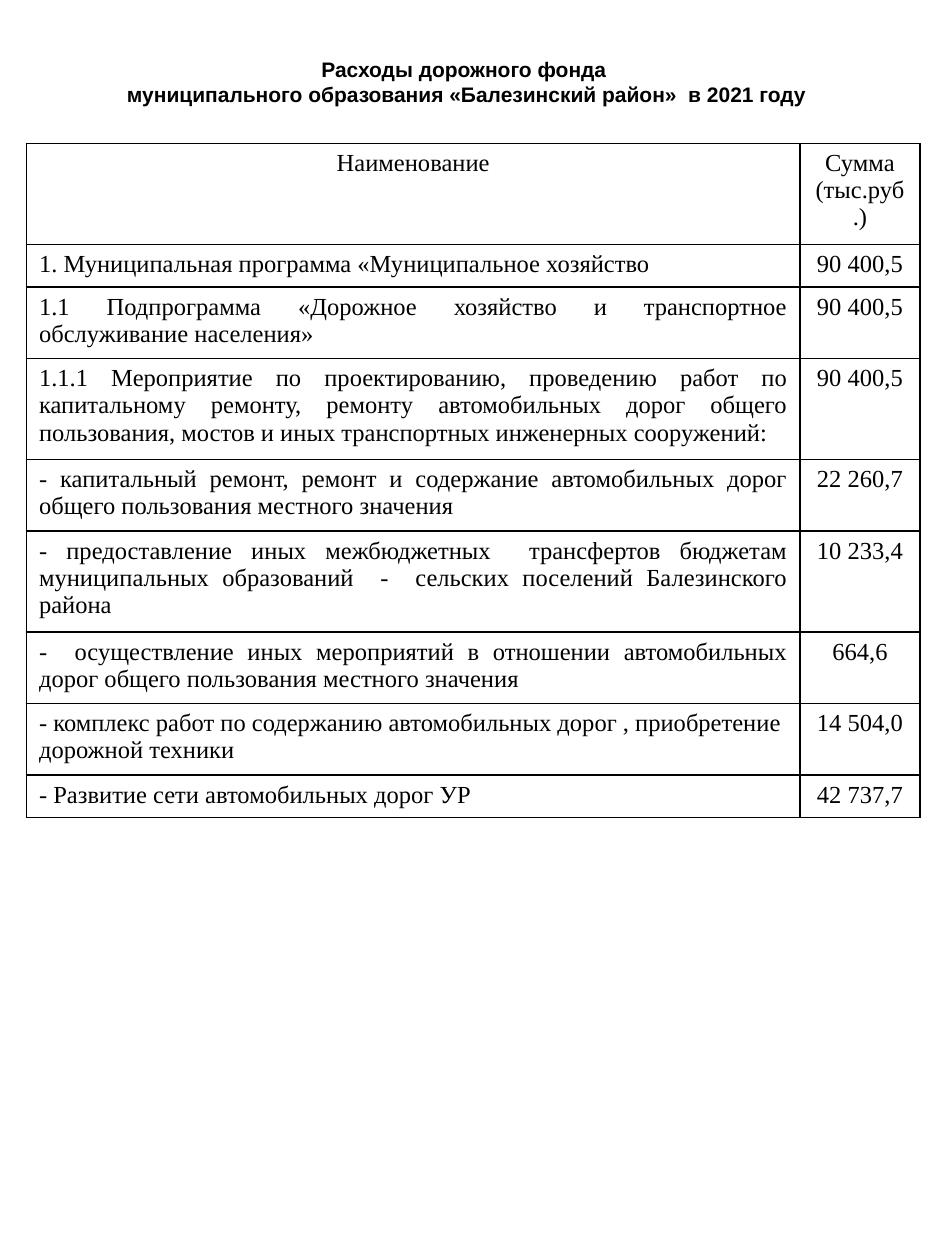
from dataclasses import dataclass

from lxml.etree import SubElement
from pptx import Presentation
from pptx.dml.color import RGBColor as RGB
from pptx.enum.text import MSO_ANCHOR as Anchor, PP_ALIGN as Align
from pptx.oxml.ns import qn
from pptx.util import Pt


@dataclass(frozen=True)
class Theme:
    ink: RGB = RGB(0, 0, 0)
    paper: RGB = RGB(255, 255, 255)
    title_font: str = "Arial"
    title_size: int = 12
    table_font: str = "Times New Roman"
    table_size: int = 14
    border: int = 1


THEME = Theme()

HEADING = [
    "Расходы дорожного фонда ",
    "муниципального образования «Балезинский район»  в 2021 году",
]

# Name, amount, lines of text in the row, alignment of the name
EXPENSES = [
    ("Наименование", "Сумма (тыс.руб.)", 3, Align.CENTER),
    ("1. Муниципальная программа «Муниципальное хозяйство ", "90 400,5", 1, Align.JUSTIFY),
    ("1.1 Подпрограмма «Дорожное хозяйство и транспортное обслуживание населения»",
     "90 400,5", 2, Align.JUSTIFY),
    ("1.1.1 Мероприятие по проектированию, проведению работ по капитальному ремонту, "
     "ремонту автомобильных дорог общего пользования, мостов и иных транспортных "
     "инженерных сооружений:", "90 400,5", 3, Align.JUSTIFY),
    ("- капитальный ремонт, ремонт и содержание автомобильных дорог общего пользования "
     "местного значения ", "22 260,7", 2, Align.JUSTIFY),
    ("- предоставление иных межбюджетных  трансфертов бюджетам муниципальных "
     "образований  -  сельских поселений Балезинского района ",
     "10 233,4", 3, Align.JUSTIFY),
    ("-  осуществление иных мероприятий в отношении автомобильных дорог общего "
     "пользования местного значения", "664,6", 2, Align.JUSTIFY),
    ("- комплекс работ по содержанию автомобильных дорог , приобретение дорожной техники",
     "14 504,0", 2, Align.LEFT),
    ("- Развитие сети автомобильных дорог УР", "42 737,7", 1, Align.LEFT),
]

COLUMN_WIDTHS = (442.1, 68.4)
ONE_LINE_ROW = 24.4
EXTRA_LINE = 16.4


def apply_format(target, values):
    for name, value in values.items():
        setattr(target, name, value)


def write(paragraph, words, align, font, size, bold):
    paragraph.alignment = align
    run = paragraph.add_run()
    run.text = words
    apply_format(run.font, {"name": font, "size": Pt(size), "bold": bold})
    run.font.color.rgb = THEME.ink


def add_heading(slide):
    frame = slide.shapes.add_textbox(Pt(20.2), Pt(-15.1), Pt(493.2), Pt(93.6)).text_frame
    # The larger top margin lowers the centred text
    apply_format(frame, {"word_wrap": True, "vertical_anchor": Anchor.MIDDLE,
                         "margin_top": Pt(33.2), "margin_bottom": Pt(3.6)})
    for index, line in enumerate(HEADING):
        paragraph = frame.add_paragraph() if index else frame.paragraphs[0]
        write(paragraph, line, Align.CENTER, THEME.title_font, THEME.title_size, True)


def add_borders(cell):
    properties = cell._tc.get_or_add_tcPr()
    for side in ("lnL", "lnR", "lnT", "lnB"):
        line = SubElement(properties, qn(f"a:{side}"), w=str(Pt(THEME.border)))
        paint = SubElement(line, qn("a:solidFill"))
        SubElement(paint, qn("a:srgbClr"), val=str(THEME.ink))


def fill_cell(cell, words, align):
    add_borders(cell)
    cell.fill.solid()
    cell.fill.fore_color.rgb = THEME.paper
    write(cell.text_frame.paragraphs[0], words, align,
          THEME.table_font, THEME.table_size, False)


def add_expenses(slide):
    heights = [ONE_LINE_ROW + EXTRA_LINE * (lines - 1) for _, _, lines, _ in EXPENSES]
    expenses = slide.shapes.add_table(
        len(EXPENSES), len(COLUMN_WIDTHS), Pt(15.1), Pt(82.1),
        Pt(sum(COLUMN_WIDTHS)), Pt(sum(heights))).table
    apply_format(expenses, {"first_row": False, "horz_banding": False})
    for column, width in zip(expenses.columns, COLUMN_WIDTHS):
        column.width = Pt(width)
    for row, height, (name, amount, _, align) in zip(expenses.rows, heights, EXPENSES):
        row.height = Pt(height)
        fill_cell(row.cells[0], name, align)
        fill_cell(row.cells[1], amount, Align.CENTER)


def main():
    deck = Presentation()
    apply_format(deck, {"slide_width": Pt(540), "slide_height": Pt(720)})
    slide = deck.slides.add_slide(deck.slide_layouts[6])
    add_heading(slide)
    add_expenses(slide)
    deck.save("out.pptx")


if __name__ == "__main__":
    main()
